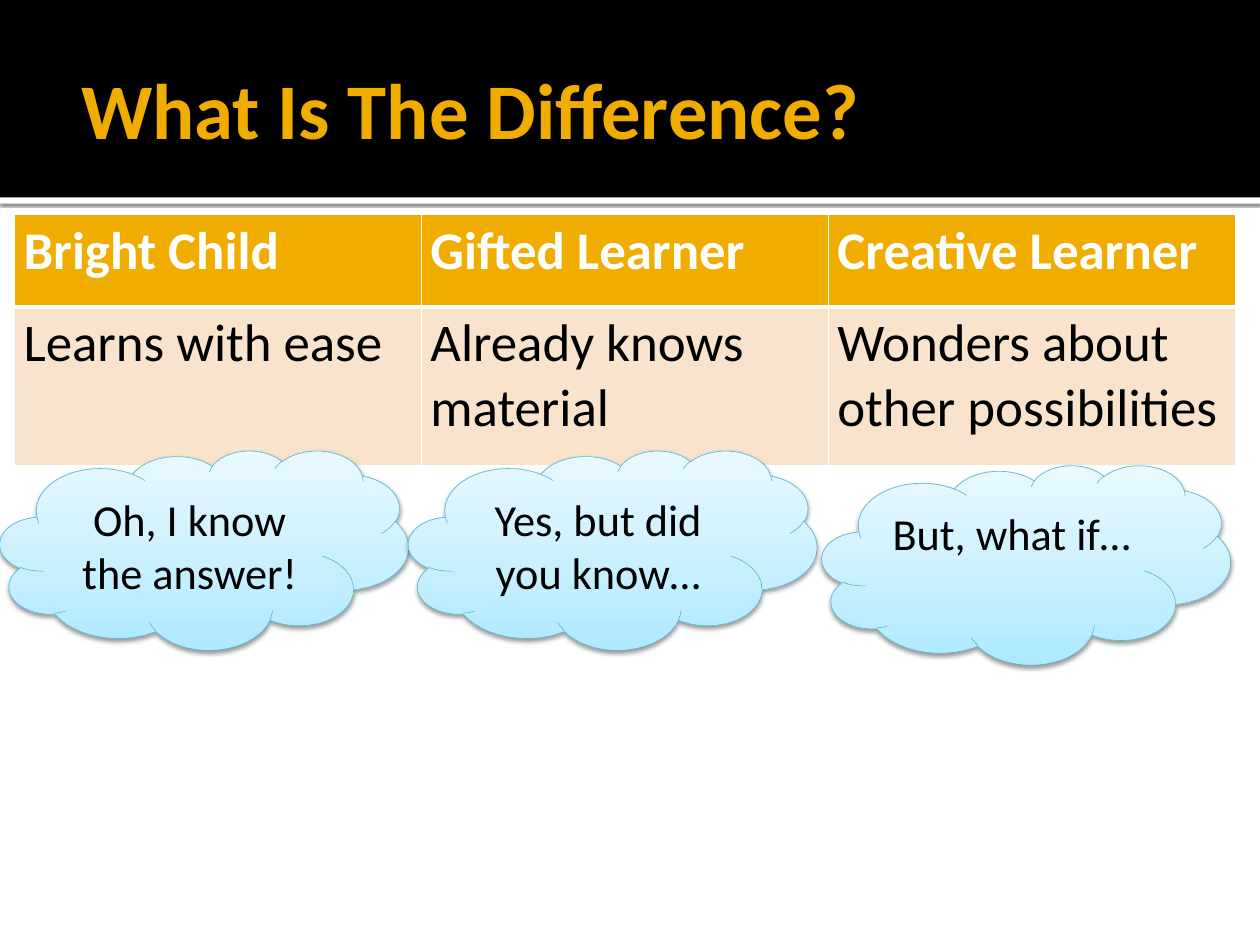
from dataclasses import dataclass

from lxml.etree import SubElement
from pptx import Presentation
from pptx.dml.color import RGBColor
from pptx.enum.shapes import MSO_SHAPE
from pptx.enum.text import MSO_ANCHOR, MSO_AUTO_SIZE, PP_ALIGN
from pptx.oxml import parse_xml
from pptx.oxml.ns import nsdecls, qn
from pptx.shapes.autoshape import Shape
from pptx.slide import Slide
from pptx.table import _Cell
from pptx.text.text import _Paragraph
from pptx.util import Pt

FONT = "Calibri"
BLACK = RGBColor(0x00, 0x00, 0x00)
WHITE = RGBColor(0xFF, 0xFF, 0xFF)
GOLD = RGBColor(0xF0, 0xAD, 0x00)
PEACH = RGBColor(0xF9, 0xE3, 0xCC)
CLOUD_LINE = RGBColor(0x5B, 0xB3, 0xCA)
CLOUD_STOPS = (
    (0, RGBColor(0xAD, 0xE9, 0xFF)),
    (35, RGBColor(0xC5, 0xEF, 0xFF)),
    (100, RGBColor(0xE9, 0xF9, 0xFF)),
)

SLIDE_WIDTH, SLIDE_HEIGHT = 1024, 768
CLOUD_WIDTH, CLOUD_HEIGHT = 332, 162
TABLE_ROWS = (
    ("Bright Child", "Gifted Learner", "Creative Learner"),
    ("Learns with ease", "Already knows material", "Wonders about other possibilities"),
)


@dataclass(frozen=True)
class Bar:
    top: float
    height: float
    color: RGBColor


@dataclass(frozen=True)
class Cloud:
    left: float
    top: float
    text: str
    anchor: MSO_ANCHOR = MSO_ANCHOR.MIDDLE
    top_margin: float = 3.6


BARS = (Bar(160.5, 5, WHITE), Bar(0, 160.5, BLACK))
CLOUDS = (
    Cloud(0, 366, "Oh, I know the answer!"),
    Cloud(332, 366, "Yes, but did you know…"),
    Cloud(668, 378, "But, what if…", MSO_ANCHOR.TOP, 9),
)


def style_paragraph(paragraph: _Paragraph, size: float, color: RGBColor,
                    bold: bool = False, alignment: PP_ALIGN = PP_ALIGN.LEFT) -> None:
    paragraph.alignment = alignment
    paragraph.font.name = FONT
    paragraph.font.size = Pt(size)
    paragraph.font.bold = bold
    paragraph.font.color.rgb = color


def add_shadow(shape: Shape, opacity: int, blur: float, distance: float) -> None:
    shape.shadow.inherit = False
    effects = shape.element.spPr.find(qn("a:effectLst"))
    effects.append(parse_xml(
        f'<a:outerShdw {nsdecls("a")} blurRad="{Pt(blur)}" dist="{Pt(distance)}" '
        f'dir="5400000" rotWithShape="0"><a:srgbClr val="{BLACK}">'
        f'<a:alpha val="{opacity * 1000}"/></a:srgbClr></a:outerShdw>'))


def add_bar(slide: Slide, bar: Bar) -> Shape:
    shape = slide.shapes.add_shape(
        MSO_SHAPE.RECTANGLE, 0, Pt(bar.top), Pt(SLIDE_WIDTH), Pt(bar.height))
    shape.fill.solid()
    shape.fill.fore_color.rgb = bar.color
    shape.line.fill.background()
    shape.shadow.inherit = False
    return shape


def format_title(slide: Slide) -> None:
    title = slide.shapes.title
    title.left, title.top, title.width, title.height = Pt(56), Pt(42), Pt(916), Pt(91)
    frame = title.text_frame
    frame.text = "What Is The Difference?"
    frame.auto_size = MSO_AUTO_SIZE.NONE
    frame.vertical_anchor = MSO_ANCHOR.MIDDLE
    frame.margin_left = Pt(10)
    frame.margin_top = frame.margin_right = frame.margin_bottom = Pt(5)
    style_paragraph(frame.paragraphs[0], 64, GOLD, bold=True)


def set_borders(cell: _Cell, top: float, bottom: float) -> None:
    properties = cell._tc.get_or_add_tcPr()
    widths = {"lnL": 1, "lnR": 1, "lnT": top, "lnB": bottom}
    for index, (side, width) in enumerate(widths.items()):
        properties.insert(index, parse_xml(
            f'<a:{side} {nsdecls("a")} w="{Pt(width)}"><a:solidFill>'
            f'<a:srgbClr val="{WHITE}"/></a:solidFill></a:{side}>'))


def add_learner_table(slide: Slide) -> None:
    table = slide.shapes.add_table(
        len(TABLE_ROWS), 3, Pt(12), Pt(174.5), Pt(992), Pt(204)).table
    table.horz_banding = False
    for row, height in zip(table.rows, (75, 129)):
        row.height = Pt(height)
    for row_index, texts in enumerate(TABLE_ROWS):
        is_header = row_index == 0
        for column_index, text in enumerate(texts):
            cell = table.cell(row_index, column_index)
            cell.text = text
            cell.fill.solid()
            cell.fill.fore_color.rgb = GOLD if is_header else PEACH
            set_borders(cell, 1 if is_header else 3, 3 if is_header else 1)
            style_paragraph(cell.text_frame.paragraphs[0], 43,
                            WHITE if is_header else BLACK, bold=is_header)


def fill_cloud(shape: Shape) -> None:
    shape.fill.gradient()
    shape.fill.gradient_angle = 90
    stops = shape.element.spPr.find(qn("a:gradFill")).find(qn("a:gsLst"))
    for stop in list(stops):
        stops.remove(stop)
    for position, color in CLOUD_STOPS:
        stop = SubElement(stops, qn("a:gs"), pos=str(position * 1000))
        SubElement(stop, qn("a:srgbClr"), val=str(color))


def add_cloud(slide: Slide, cloud: Cloud) -> None:
    shape = slide.shapes.add_shape(
        MSO_SHAPE.CLOUD, Pt(cloud.left), Pt(cloud.top), Pt(CLOUD_WIDTH), Pt(CLOUD_HEIGHT))
    fill_cloud(shape)
    shape.line.color.rgb = CLOUD_LINE
    shape.line.width = Pt(0.5)
    add_shadow(shape, 38, 3.5, 2)
    frame = shape.text_frame
    frame.word_wrap = True
    frame.vertical_anchor = cloud.anchor
    frame.margin_top = Pt(cloud.top_margin)
    frame.text = cloud.text
    style_paragraph(frame.paragraphs[0], 36, BLACK, alignment=PP_ALIGN.CENTER)


def main() -> None:
    presentation = Presentation()
    presentation.slide_width = Pt(SLIDE_WIDTH)
    presentation.slide_height = Pt(SLIDE_HEIGHT)
    slide = presentation.slides.add_slide(presentation.slide_layouts[5])

    # Header band, with the title in front
    white_bar, _ = [add_bar(slide, bar) for bar in BARS]
    add_shadow(white_bar, 60, 2.5, 0.8)
    format_title(slide)
    slide.shapes.element.append(slide.shapes.title.element)

    # Comparison table
    add_learner_table(slide)

    # Thought clouds
    for cloud in CLOUDS:
        add_cloud(slide, cloud)

    presentation.save("out.pptx")


if __name__ == "__main__":
    main()
